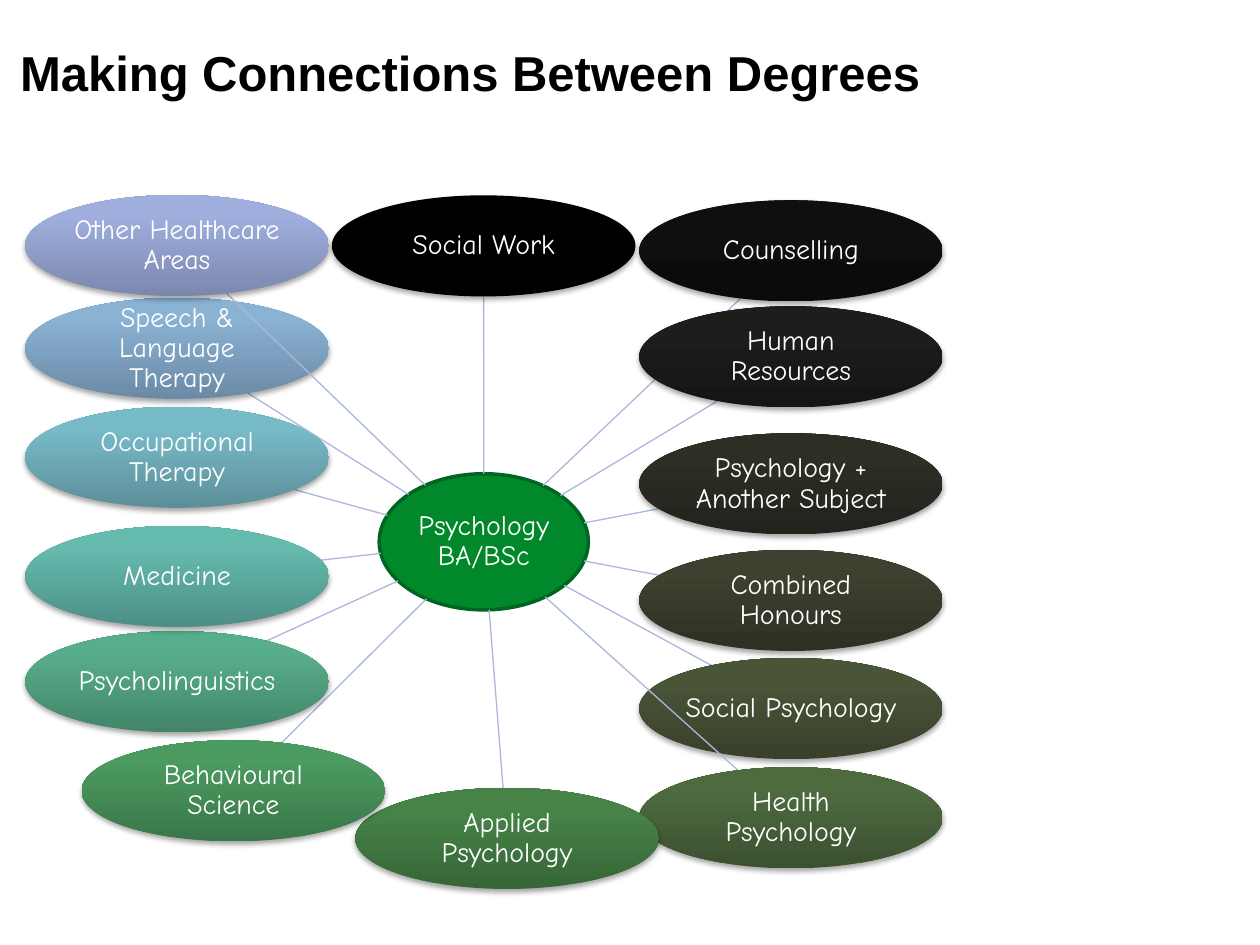
from math import hypot

from lxml.etree import SubElement
from pptx import Presentation
from pptx.dml.color import RGBColor
from pptx.enum.shapes import MSO_CONNECTOR as Connector, MSO_SHAPE as Shape
from pptx.enum.text import MSO_ANCHOR as Anchor, MSO_AUTO_SIZE as AutoSize, PP_ALIGN as Align
from pptx.oxml.ns import qn
from pptx.util import Pt

# Hub and satellite geometry: left, top, width, height in points
HUB = (216.7, 270.7, 119.5, 77.8)
NODE_WIDTH, NODE_HEIGHT = 173.5, 57.8
LEFT, RIGHT = 14.4, 365.2

# Label, left, top, bottom colour, top colour (clockwise from the top)
DEGREES = [
    ("Social Work", 189.6, 111.6, "000000", "000000"),
    ("Counselling", RIGHT, 114.4, "0B0B0B", "0F0F0F"),
    ("Human Resources", RIGHT, 175, "161514", "1E1D1B"),
    ("Psychology + Another Subject", RIGHT, 247.6, "23221C", "2F2E25"),
    ("Combined Honours", RIGHT, 314.2, "2F2F24", "3F402F"),
    ("Social Psychology", RIGHT, 376, "39402B", "4A5538"),
    ("Health Psychology", RIGHT, 438.4, "3C5030", "4E6B40"),
    ("Applied Psychology", 203, 450.2, "376638", "478347"),
    ("Behavioural Science", 46.6, 423, "3A7748", "4B9A60"),
    ("Psycholinguistics", LEFT, 360.7, "43856A", "57AE8A"),
    ("Medicine", LEFT, 300.5, "4D8F86", "66BBAF"),
    ("Occupational Therapy", LEFT, 232.4, "5C8F9A", "78BBC8"),
    ("Speech & Language Therapy", LEFT, 170.2, "6B8AA6", "8AB2D3"),
    ("Other Healthcare Areas", LEFT, 111.4, "7B88AE", "9FAEDD"),
]
LABEL_FONT = {"name": "Comic Neue", "size": Pt(16), "bold": False}
TITLE_FONT = {"name": "Arial", "size": Pt(28), "bold": True}
LABEL_FRAME = {"word_wrap": True, "vertical_anchor": Anchor.MIDDLE,
               **{f"margin_{side}": Pt(0.72) for side in ("left", "top", "right", "bottom")}}
TITLE_FRAME = {"word_wrap": True, "vertical_anchor": Anchor.TOP,
               "auto_size": AutoSize.SHAPE_TO_FIT_TEXT}


def rgb(hex_code):
    return RGBColor.from_string(hex_code)


def apply(target, values):
    for name, value in values.items():
        setattr(target, name, value)


def write(frame, text, frame_format, font_format, color, align):
    apply(frame, frame_format)
    para = frame.paragraphs[0]
    para.alignment = align
    span = para.add_run()
    span.text = text
    apply(span.font, font_format)
    span.font.color.rgb = rgb(color)
    return para


def add_title(page, text):
    title = page.shapes.title
    apply(title, {"left": Pt(4.3), "top": Pt(20.9), "width": Pt(545), "height": Pt(41)})
    write(title.text_frame, text, TITLE_FRAME, TITLE_FONT, "000000", Align.LEFT)


def add_ellipse(page, bounds, label):
    ellipse = page.shapes.add_shape(Shape.OVAL, *map(Pt, bounds))
    ellipse.shadow.inherit = False
    para = write(ellipse.text_frame, label, LABEL_FRAME, LABEL_FONT, "FFFFFF", Align.CENTER)
    para.line_spacing = 0.9
    return ellipse


def add_hub(page, label):
    hub = add_ellipse(page, HUB, label)
    hub.fill.solid()
    hub.fill.fore_color.rgb = rgb("00882B")
    hub.line.color.rgb = rgb("006520")
    hub.line.width = Pt(2)


def add_soft_shadow(shape):
    effects = shape._element.spPr.find(qn("a:effectLst"))
    shadow = SubElement(effects, qn("a:outerShdw"), blurRad=str(Pt(3.1)),
                        dist=str(Pt(1.8)), dir="5400000", rotWithShape="0")
    color = SubElement(shadow, qn("a:srgbClr"), val="000000")
    SubElement(color, qn("a:alpha"), val="35000")


def add_degree(page, bounds, label, bottom, top):
    node = add_ellipse(page, bounds, label)
    node.line.fill.background()
    if bottom == top:
        node.fill.solid()
        node.fill.fore_color.rgb = rgb(top)
    else:
        node.fill.gradient()
        node.fill.gradient_angle = 90
        for stop, position, color in zip(node.fill.gradient_stops, (0, 0.8), (bottom, top)):
            stop.position = position
            stop.color.rgb = rgb(color)
    add_soft_shadow(node)


def center(bounds):
    left, top, width, height = bounds
    return left + width / 2, top + height / 2


def edge_point(bounds, target):
    """Where the ray from an ellipse's centre to the target crosses its outline."""
    x, y = center(bounds)
    dx, dy = target[0] - x, target[1] - y
    scale = 1 / hypot(dx / (bounds[2] / 2), dy / (bounds[3] / 2))
    return x + dx * scale, y + dy * scale


def add_spoke(page, bounds):
    start = edge_point(HUB, center(bounds))
    end = edge_point(bounds, center(HUB))
    spoke = page.shapes.add_connector(Connector.STRAIGHT, *map(Pt, start + end))
    spoke.line.color.rgb = rgb("AAB8DC")
    spoke.line.width = Pt(0.75)
    SubElement(spoke._element.spPr, qn("a:effectLst"))


def main():
    deck = Presentation()
    deck.slide_width, deck.slide_height = Pt(720), Pt(540)
    page = deck.slides.add_slide(deck.slide_layouts[5])
    add_title(page, "Making Connections Between Degrees")

    # Hub first, then each spoke beneath its own degree
    add_hub(page, "Psychology BA/BSc")
    for label, left, top, bottom_color, top_color in DEGREES:
        bounds = (left, top, NODE_WIDTH, NODE_HEIGHT)
        add_spoke(page, bounds)
        add_degree(page, bounds, label, bottom_color, top_color)

    deck.save("out.pptx")


if __name__ == "__main__":
    main()
